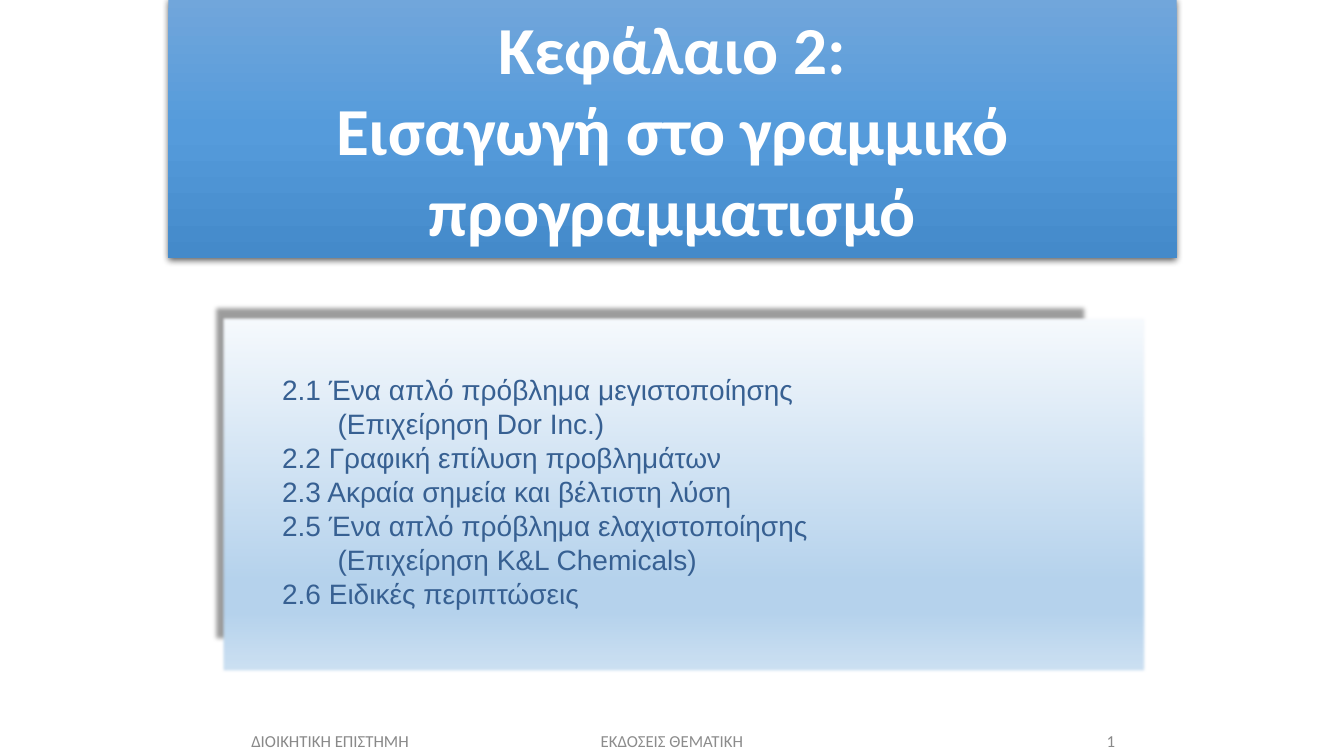
from dataclasses import dataclass

from lxml import etree
from pptx import Presentation
from pptx.dml.color import RGBColor
from pptx.enum.shapes import MSO_SHAPE
from pptx.enum.text import MSO_ANCHOR, PP_ALIGN
from pptx.oxml.ns import qn
from pptx.util import Inches, Pt

RECTANGLE = MSO_SHAPE.RECTANGLE
MIDDLE = MSO_ANCHOR.MIDDLE
LEFT, CENTER, RIGHT = PP_ALIGN.LEFT, PP_ALIGN.CENTER, PP_ALIGN.RIGHT

WHITE = RGBColor(0xFF, 0xFF, 0xFF)
NAVY = RGBColor(0x37, 0x60, 0x92)
GRAY = RGBColor(0x89, 0x89, 0x89)
LIGHT_GRAY = RGBColor(0x8C, 0x8C, 0x8C)
PALE = RGBColor(0xF7, 0xFA, 0xFD)
SKY = RGBColor(0xB5, 0xD2, 0xEC)
MIST = RGBColor(0xCE, 0xE1, 0xF2)
BLUE_TOP = RGBColor(0x71, 0xA6, 0xDB)
BLUE_MIDDLE = RGBColor(0x55, 0x9B, 0xDB)
BLUE_BOTTOM = RGBColor(0x44, 0x8A, 0xCA)


@dataclass
class Shadow:
    blur: float
    distance: float
    angle: int
    opacity: int
    scale: float = 100


@dataclass
class Panel:
    left: float
    top: float
    width: float
    height: float
    stops: list[tuple[int, RGBColor]]
    shadow: Shadow
    soft_edge: float = 0


@dataclass
class Footer:
    text: str
    left: float
    width: float
    align: PP_ALIGN
    color: RGBColor


@dataclass
class Topic:
    text: str
    indent: float = 0.5


TITLE = "Κεφάλαιο 2:\vΕισαγωγή στο γραμμικό προγραμματισμό"
TITLE_PANEL = Panel(1.67, -0.01, 10, 2.57,
                    [(0, BLUE_TOP), (50, BLUE_MIDDLE), (100, BLUE_BOTTOM)],
                    Shadow(4.5, 1.5, 90, 63))
TOPIC_PANEL = Panel(2.2, 3.14, 9.17, 3.53,
                    [(0, PALE), (74, SKY), (83, SKY), (100, MIST)],
                    Shadow(3.1, 9.8, 234, 38, 94.5), soft_edge=1)
TOPICS = [
    Topic("2.1 Ένα απλό πρόβλημα μεγιστοποίησης"),
    Topic("(Επιχείρηση Dor Inc.)", 1.05),
    Topic("2.2 Γραφική επίλυση προβλημάτων"),
    Topic("2.3 Ακραία σημεία και βέλτιστη λύση"),
    Topic("2.5 Ένα απλό πρόβλημα ελαχιστοποίησης"),
    Topic("(Επιχείρηση K&L Chemicals)", 1.05),
    Topic("2.6 Ειδικές περιπτώσεις"),
]
FOOTERS = [
    Footer("ΕΚΔΟΣΕΙΣ ΘΕΜΑΤΙΚΗ", 5.08, 3.17, CENTER, LIGHT_GRAY),
    Footer("1", 8.83, 2.33, RIGHT, GRAY),
    Footer("ΔΙΟΙΚΗΤΙΚΗ ΕΠΙΣΤΗΜΗ", 1.69, 3.17, CENTER, GRAY),
]


def add_gradient(properties, stops: list[tuple[int, RGBColor]]) -> None:
    gradient = etree.SubElement(properties, qn("a:gradFill"), rotWithShape="1")
    stop_list = etree.SubElement(gradient, qn("a:gsLst"))
    for position, color in stops:
        stop = etree.SubElement(stop_list, qn("a:gs"), pos=str(position * 1000))
        etree.SubElement(stop, qn("a:srgbClr"), val=str(color))
    etree.SubElement(gradient, qn("a:lin"), ang="5400000", scaled="0")


def add_effects(properties, shadow: Shadow, soft_edge: float) -> None:
    effects = etree.SubElement(properties, qn("a:effectLst"))
    scale = str(int(shadow.scale * 1000))
    outer = etree.SubElement(
        effects, qn("a:outerShdw"), blurRad=str(Pt(shadow.blur)),
        dist=str(Pt(shadow.distance)), dir=str(shadow.angle * 60000),
        sx=scale, sy=scale, algn="tl", rotWithShape="0")
    color = etree.SubElement(outer, qn("a:srgbClr"), val="000000")
    etree.SubElement(color, qn("a:alpha"), val=str(shadow.opacity * 1000))
    if soft_edge:
        etree.SubElement(effects, qn("a:softEdge"), rad=str(Pt(soft_edge)))


def add_panel(page, panel: Panel):
    box = page.shapes.add_shape(
        RECTANGLE, Inches(panel.left), Inches(panel.top),
        Inches(panel.width), Inches(panel.height))
    properties = box.element.spPr
    add_gradient(properties, panel.stops)
    box.line.fill.background()
    add_effects(properties, panel.shadow, panel.soft_edge)
    box.text_frame.word_wrap = True
    box.text_frame.vertical_anchor = MIDDLE
    return box


def format_paragraph(para, font: str, size: int, color: RGBColor,
                     align: PP_ALIGN, bold: bool = False) -> None:
    para.alignment = align
    for span in para.runs:
        span.font.name = font
        span.font.size = Pt(size)
        span.font.bold = bold
        span.font.color.rgb = color


def add_topics(page) -> None:
    frame = add_panel(page, TOPIC_PANEL).text_frame
    frame.text = "\n".join(topic.text for topic in TOPICS)
    for para, topic in zip(frame.paragraphs, TOPICS):
        format_paragraph(para, "Arial", 20, NAVY, LEFT)
        para.line_spacing = 0.8
        para.space_before = Pt(5)
        para._p.get_or_add_pPr().set("marL", str(Inches(topic.indent)))


def add_footer(page, footer: Footer) -> None:
    box = page.shapes.add_textbox(Inches(footer.left), Inches(7.21),
                                  Inches(footer.width), Inches(0.28))
    frame = box.text_frame
    frame.word_wrap = True
    frame.vertical_anchor = MIDDLE
    frame.text = footer.text
    format_paragraph(frame.paragraphs[0], "Calibri", 12, footer.color, footer.align)


def add_title(page) -> None:
    frame = add_panel(page, TITLE_PANEL).text_frame
    frame.text = TITLE
    format_paragraph(frame.paragraphs[0], "Calibri", 48, WHITE, CENTER, bold=True)


def main() -> None:
    deck = Presentation()
    deck.slide_width, deck.slide_height = Inches(13.33), Inches(7.5)
    page = deck.slides.add_slide(deck.slide_layouts[6])
    add_topics(page)
    for footer in FOOTERS:
        add_footer(page, footer)
    add_title(page)
    deck.save("out.pptx")


if __name__ == "__main__":
    main()
